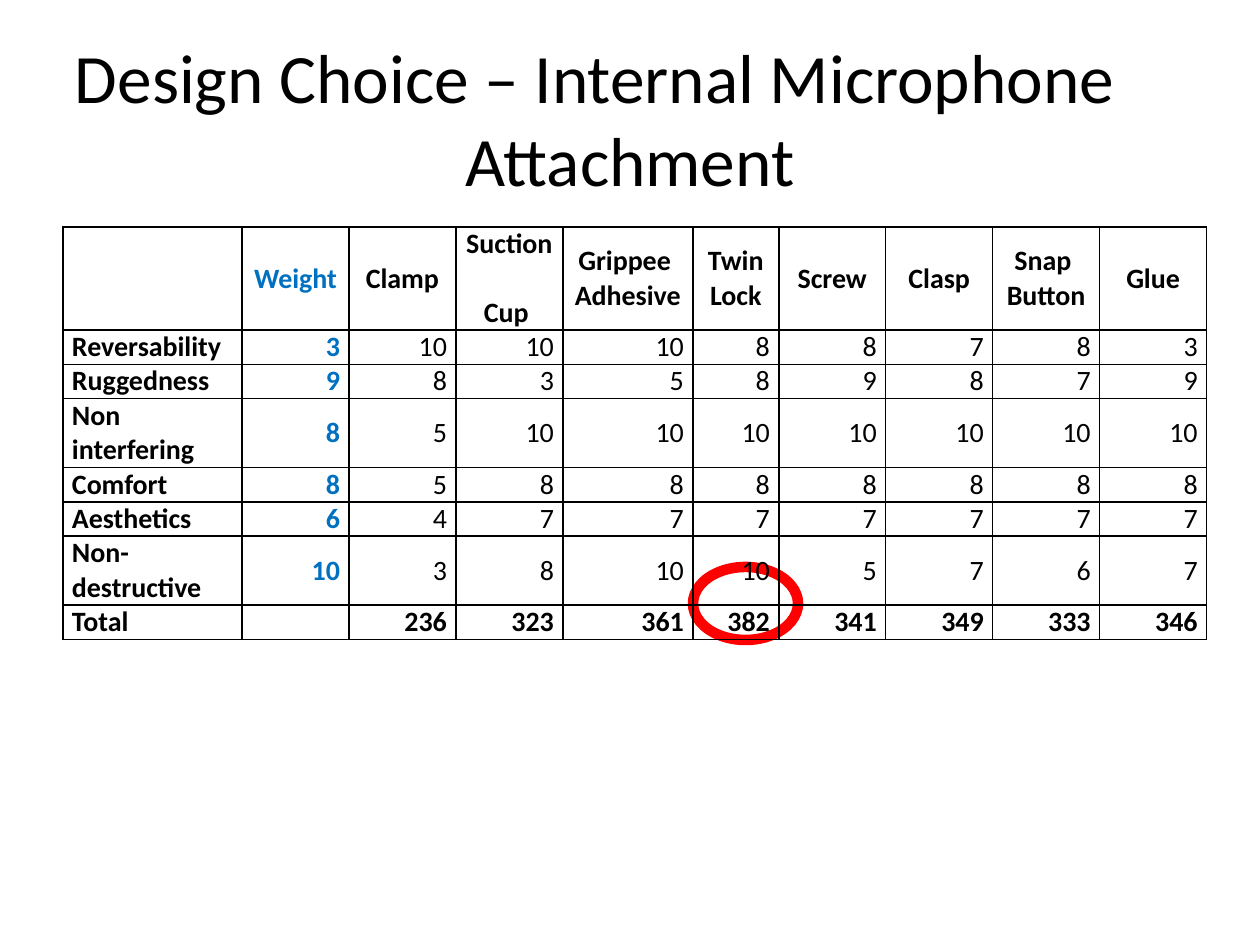
"""Build the weighted design choice slide."""
from lxml import etree
from pptx import Presentation
from pptx import util as u
from pptx.dml.color import RGBColor
from pptx.enum import shapes, text
from pptx.oxml.ns import qn

PX = 914400 / 126
INK = {"text": "000000", "weight": "0070C0", "ring": "FF0000"}
ALIGN = text.PP_ALIGN
COLS = [179, 107, 107, 107, 130, 86, 107, 107, 107, 107]
ROWS = [103, 34, 34, 69, 34, 34, 69, 34]
DATA = [
    ["", "Weight", "Clamp", "Suction \vCup ", "Grippee \vAdhesive",
     "Twin Lock", "Screw", "Clasp", "Snap \vButton", "Glue"],
    ["Reversability", 3, 10, 10, 10, 8, 8, 7, 8, 3],
    ["Ruggedness", 9, 8, 3, 5, 8, 9, 8, 7, 9],
    ["Non\ninterfering", 8, 5, 10, 10, 10, 10, 10, 10, 10],
    ["Comfort", 8, 5, 8, 8, 8, 8, 8, 8, 8],
    ["Aesthetics", 6, 4, 7, 7, 7, 7, 7, 7, 7],
    ["Non-\ndestructive", 10, 3, 8, 10, 10, 5, 7, 6, 7],
    ["Total", "", 236, 323, 361, 382, 341, 349, 333, 346],
]


def px(n):
    """Turn px into EMU."""
    return u.Emu(round(n * PX))


def style(para, size, color, bold, align):
    """Set the font and alignment of a paragraph."""
    para.alignment = align
    font = para.font
    font.name, font.size, font.bold = "Calibri", u.Pt(size), bold
    font.color.rgb = RGBColor.from_string(INK[color])


def add_title(slide, x, y, w, h):
    """Place the title, its first line set left of centre."""
    shift = 70
    title = slide.shapes.title
    title.left, title.top, title.width, title.height = map(px, (x, y, w, h))
    frame = title.text_frame
    frame.text = "Design Choice – Internal Microphone\nAttachment"
    frame.vertical_anchor = text.MSO_ANCHOR.MIDDLE
    frame.auto_size = text.MSO_AUTO_SIZE.NONE
    frame.margin_left, frame.margin_right = 0, px(shift)
    for para in frame.paragraphs:
        style(para, 39.6, "text", False, ALIGN.CENTER)
        para.space_before = u.Pt(0)
    frame.paragraphs[1]._p.get_or_add_pPr().set("marL", str(px(shift)))


def add_ring(slide, x, y, w, h):
    """Ring the winning total."""
    ring = slide.shapes.add_shape(
        shapes.MSO_SHAPE.OVAL, *map(px, (x, y, w, h)))
    ring.shadow.inherit = False
    ring.fill.background()
    ring.line.color.rgb = RGBColor.from_string(INK["ring"])
    ring.line.width = u.Pt(6)


def add_edges(cell):
    """Draw a thin line on each side of a cell."""
    props = cell._tc.get_or_add_tcPr()
    for side in ("a:lnL", "a:lnR", "a:lnT", "a:lnB"):
        line = etree.SubElement(props, qn(side), w=str(u.Pt(1)))
        fill = etree.SubElement(line, qn("a:solidFill"))
        etree.SubElement(fill, qn("a:srgbClr"), val=INK["text"])


def fill_cell(cell, value, row, col):
    """Write and format one cell by its row and column."""
    cell.text = str(value)
    cell.margin_left = cell.margin_right = px(9)
    cell.margin_top = cell.margin_bottom = 0
    cell.vertical_anchor = text.MSO_ANCHOR.MIDDLE
    add_edges(cell)
    cell.fill.background()
    bold = row in (0, len(ROWS) - 1) or col < 2
    align = (ALIGN.CENTER if row == 0 else
             ALIGN.LEFT if col == 0 else ALIGN.RIGHT)
    for para in cell.text_frame.paragraphs:
        style(para, 16, "weight" if col == 1 else "text", bold, align)
        if value == "":
            etree.SubElement(para._p, qn("a:endParaRPr"), sz="1600")


def add_scores(slide, x, y):
    """Place the table of weighted scores."""
    table = slide.shapes.add_table(
        len(ROWS), len(COLS), *map(px, (x, y, sum(COLS), sum(ROWS)))).table
    table.first_row = table.horz_banding = False
    for col, width in zip(table.columns, COLS):
        col.width = px(width)
    for row, height in zip(table.rows, ROWS):
        row.height = px(height)
    for r, line in enumerate(DATA):
        for c, value in enumerate(line):
            fill_cell(table.cell(r, c), value, r, c)


def main():
    """Build and save the slide."""
    deck = Presentation()
    deck.slide_width, deck.slide_height = px(1260), px(945)
    slide = deck.slides.add_slide(deck.slide_layouts[5])
    add_title(slide, 63, 38, 1134, 158)
    add_ring(slide, 693, 567, 105, 73)
    add_scores(slide, 63, 227)
    deck.save("out.pptx")


if __name__ == "__main__":
    main()
